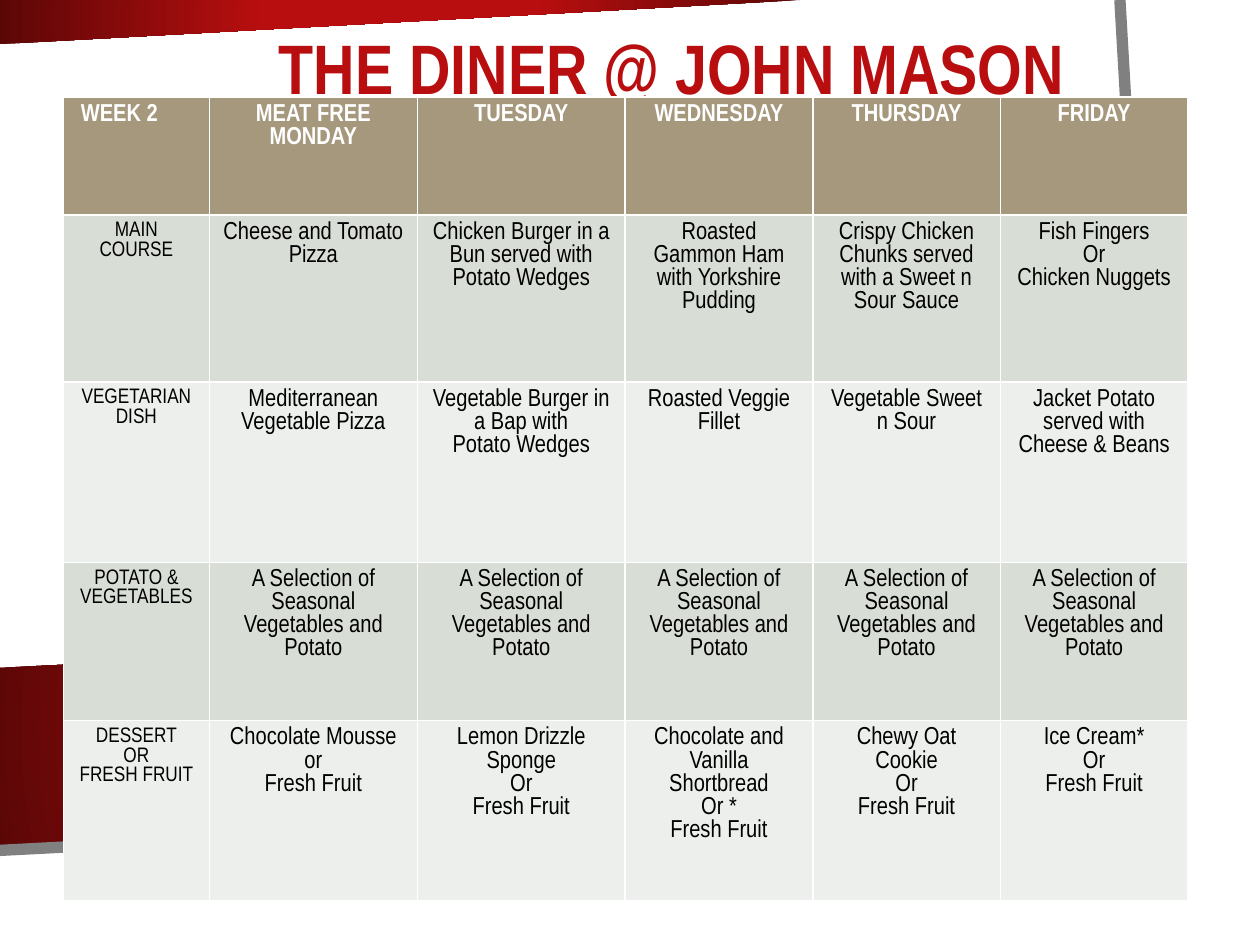
"""Build the weekly school menu slide with its red ribbons and lunch table."""
from lxml.etree import SubElement
from pptx import Presentation
from pptx.dml.color import RGBColor
from pptx.enum.text import MSO_ANCHOR as Anchor, MSO_AUTO_SIZE as AutoSize, PP_ALIGN as Align
from pptx.oxml.ns import qn
from pptx.util import Pt

RED = RGBColor(0xB8, 0x0E, 0x0F)
DARK_RED = RGBColor(0x5C, 0x07, 0x07)
GREY = RGBColor(0x80, 0x80, 0x80)
TAN = RGBColor(0xA6, 0x98, 0x7D)
SAGE = RGBColor(0xD8, 0xDE, 0xD5)
PALE_SAGE = RGBColor(0xEC, 0xEF, 0xEB)
WHITE = RGBColor(0xFF, 0xFF, 0xFF)
BLACK = RGBColor(0, 0, 0)
FONT = "Arial Narrow"

RIBBONS = [
    [(-0.7, 381.6), (658.8, 349.9), (666, 452.2), (0, 485.3)],
    [(0, 0), (457.2, 0), (0, 25.2)],
]
FRAME_LINE = [(640, 0), (666, 451.4), (-1.4, 486)]

COLUMN_WIDTHS = [83.5, 118.8, 118.8, 107.2, 107.2, 107.2]
ROW_HEIGHTS = [67.5, 95.5, 103, 90.5, 103]
MENU = [
    ["WEEK 2", "MEAT FREE MONDAY", "TUESDAY", "WEDNESDAY", "THURSDAY", "FRIDAY"],
    ["MAIN\nCOURSE", "Cheese and Tomato Pizza",
     "Chicken Burger in a Bun served with Potato Wedges",
     "Roasted Gammon Ham with Yorkshire Pudding",
     "Crispy Chicken Chunks served with a Sweet n Sour Sauce",
     "Fish Fingers\nOr\nChicken Nuggets"],
    ["VEGETARIAN DISH", "Mediterranean Vegetable Pizza",
     "Vegetable Burger in a Bap with\nPotato Wedges",
     "Roasted Veggie Fillet", "Vegetable Sweet n Sour",
     "Jacket Potato served with Cheese & Beans"],
    ["POTATO & VEGETABLES"] + ["A Selection of Seasonal Vegetables and Potato"] * 5,
    ["DESSERT\nOR\nFRESH FRUIT", "Chocolate Mousse\nor\nFresh Fruit",
     "Lemon Drizzle Sponge\nOr\nFresh Fruit",
     "Chocolate and Vanilla Shortbread\nOr *\nFresh Fruit",
     "Chewy Oat Cookie\nOr\nFresh Fruit", "Ice Cream*\nOr\nFresh Fruit"],
]


def add_outline(shapes, points, close):
    start, *rest = [(Pt(x), Pt(y)) for x, y in points]
    builder = shapes.build_freeform(*start)
    builder.add_line_segments(rest, close=close)
    outline = builder.convert_to_shape()
    outline.shadow.inherit = False
    return outline


def style_font(para, size, color, bold):
    font = para.font
    font.name, font.size, font.bold = FONT, Pt(size), bold
    font.color.rgb = color


deck = Presentation()
deck.slide_width, deck.slide_height = Pt(720), Pt(540)
page = deck.slides.add_slide(deck.slide_layouts[5])

for points in RIBBONS:
    ribbon = add_outline(page.shapes, points, True)
    ribbon.line.fill.background()
    ribbon.fill.gradient()
    for stop, color, position in zip(ribbon.fill.gradient_stops, (RED, DARK_RED), (0.34, 1)):
        stop.color.rgb, stop.position = color, position
    gradient = ribbon._element.spPr.find(qn("a:gradFill"))
    gradient.remove(gradient.find(qn("a:lin")))
    circle = SubElement(gradient, qn("a:path"), path="circle")
    SubElement(circle, qn("a:fillToRect"), l="50000", t="50000", r="50000", b="50000")

frame = add_outline(page.shapes, FRAME_LINE, False)
frame.fill.background()
frame.line.color.rgb, frame.line.width = GREY, Pt(6.5)

title = page.shapes.title
title.left, title.top, title.width, title.height = Pt(77.8), Pt(18), Pt(612), Pt(48.2)
title.text_frame.text = "THE DINER @ JOHN MASON"
title.text_frame.auto_size = AutoSize.NONE
title.text_frame.vertical_anchor = Anchor.BOTTOM
heading = title.text_frame.paragraphs[0]
heading.alignment, heading.line_spacing = Align.CENTER, 0.9
style_font(heading, 40, RED, True)

table = page.shapes.add_table(
    len(ROW_HEIGHTS), len(COLUMN_WIDTHS), Pt(36.2), Pt(55.4),
    Pt(sum(COLUMN_WIDTHS)), Pt(sum(ROW_HEIGHTS))).table
for column, width in zip(table.columns, COLUMN_WIDTHS):
    column.width = Pt(width)
for row, height in zip(table.rows, ROW_HEIGHTS):
    row.height = Pt(height)

for row_index, texts in enumerate(MENU):
    is_header = row_index == 0
    band = TAN if is_header else SAGE if row_index % 2 else PALE_SAGE
    for column_index, text in enumerate(texts):
        is_label = column_index == 0
        cell = table.cell(row_index, column_index)
        cell.fill.solid()
        cell.fill.fore_color.rgb = band
        cell.text_frame.text = text
        for para in cell.text_frame.paragraphs:
            para.alignment = Align.LEFT if is_header and is_label else Align.CENTER
            style_font(para, 12 if is_label and not is_header else 14,
                       WHITE if is_header else BLACK, is_header)
table.cell(0, 0).margin_left = Pt(10)

deck.save("out.pptx")
